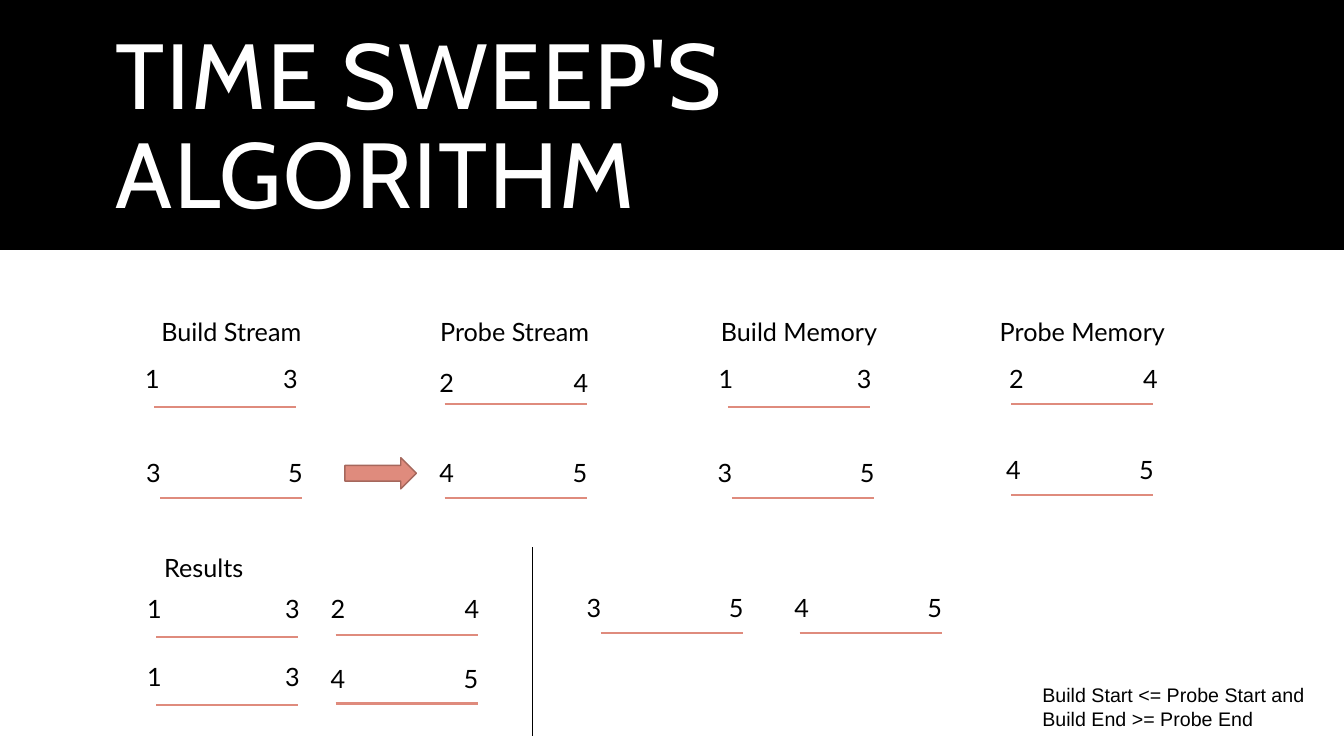
from dataclasses import dataclass
from lxml.etree import SubElement
from pptx import Presentation
from pptx.dml.color import RGBColor as Rgb
from pptx.enum.shapes import MSO_CONNECTOR as Conn, MSO_SHAPE as Form
from pptx.enum.text import MSO_ANCHOR as Anchor, MSO_AUTO_SIZE as Fit, PP_ALIGN as Align
from pptx.oxml.ns import qn
from pptx.util import Emu, Pt


@dataclass(frozen=True)
class Theme:
    black: Rgb = Rgb(0, 0, 0)
    white: Rgb = Rgb(255, 255, 255)
    coral: Rgb = Rgb(0xDF, 0x8B, 0x7D)
    edge: Rgb = Rgb(0xA5, 0x67, 0x5C)
    head: str = "Cabin"
    body: str = "Lato"
    note: str = "Arial"
    big: int = 66
    mid: int = 18
    small: int = 14


theme = Theme()
PX = 9144  # 100 px to the inch

deck = Presentation()
deck.slide_width, deck.slide_height = Emu(1333 * PX), Emu(750 * PX)
slide = deck.slides.add_slide(deck.slide_layouts[6])
shapes = slide.shapes


def write(text, x, y, w, h, face=theme.body, size=theme.mid, color=theme.black, align=Align.LEFT):
    box = shapes.add_textbox(x * PX, y * PX, w * PX, h * PX)
    frame = box.text_frame
    frame.word_wrap = True
    frame.auto_size = Fit.SHAPE_TO_FIT_TEXT
    para = frame.paragraphs[0]
    para.text, para.alignment = text, align
    para.font.name, para.font.size = face, Pt(size)
    para.font.color.rgb = color
    return frame


def rule(x1, y1, x2, y2, color, width):
    line = shapes.add_connector(Conn.STRAIGHT, x1 * PX, y1 * PX, x2 * PX, y2 * PX)
    line.line.color.rgb, line.line.width = color, Pt(width)
    SubElement(line._element.spPr, qn("a:effectLst"))


# Title band
band = shapes.add_shape(Form.RECTANGLE, 0, 0, 1333 * PX, 248 * PX)
band.shadow.inherit = False
band.fill.solid()
band.fill.fore_color.rgb = theme.black
band.line.fill.background()

title = write("TIME SWEEP'S ALGORITHM", 105, 35, 1123, 186, theme.head, theme.big, theme.white)
title.auto_size = Fit.NONE
title.vertical_anchor = Anchor.MIDDLE
title.paragraphs[0].line_spacing = 0.9
title.paragraphs[0].runs[0].font._element.set("spc", "120")

# Column heads
heads = ["Build Stream", "Probe Stream", "Build Memory", "Probe Memory"]
for col, name in enumerate(heads):
    write(name, 133 + round(col * 281.33), 309, 193, 40, align=Align.CENTER)
write("Results", 153, 543, 194, 41)

# Interval kinds: label offsets from the bar's left end, and bar width
kinds = {
    (1, 3): (-19, 118, -48, 1.5),
    (2, 4): (-15, 118, -45, 1.5),
    (3, 5): (-24, 117, -45, 2),
    (4, 5): (-15, 117, -45, 2),
}

# Intervals: kind, left end of bar, height of bar, label nudge
spans = [
    # Streams
    ((1, 3), 153, 404, (0, 0)),
    ((3, 5), 159, 494, (0, 0)),
    ((2, 4), 441, 401, (0, 3)),
    ((4, 5), 441, 494, (0, 0)),
    # Memories
    ((1, 3), 722, 404, (0, 0)),
    ((3, 5), 726, 494, (0, 0)),
    ((2, 4), 1003, 401, (3, 0)),
    ((4, 5), 1003, 491, (0, 0)),
    # Results
    ((1, 3), 155, 632, (0, 0)),
    ((2, 4), 333, 630, (0, -1)),
    ((1, 3), 155, 699, (0, 0)),
    ((4, 5), 333, 698, (0, 0)),
    ((3, 5), 596, 628, (0, 0)),
    ((4, 5), 793, 628, (0, 0)),
]
for kind, x, y, (dx, dy) in spans:
    *ends, rise, width = kinds[kind]
    rule(x, y, x + 141, y, theme.coral, width)
    for time, end in zip(kind, ends):
        write(str(time), x + end + dx, y + rise + dy, 48, 40)

# Arrow from build to probe
arrow = shapes.add_shape(Form.RIGHT_ARROW, 342 * PX, 454 * PX, 71 * PX, 31 * PX)
arrow.shadow.inherit = False
arrow.fill.solid()
arrow.fill.fore_color.rgb = theme.coral
arrow.line.color.rgb, arrow.line.width = theme.edge, Pt(1)

# Divider and join condition
rule(528, 543, 528, 730, theme.black, 1)
write("Build Start <= Probe Start and Build End >= Probe End",
      1024, 673, 291, 57, theme.note, theme.small)

deck.save("out.pptx")
